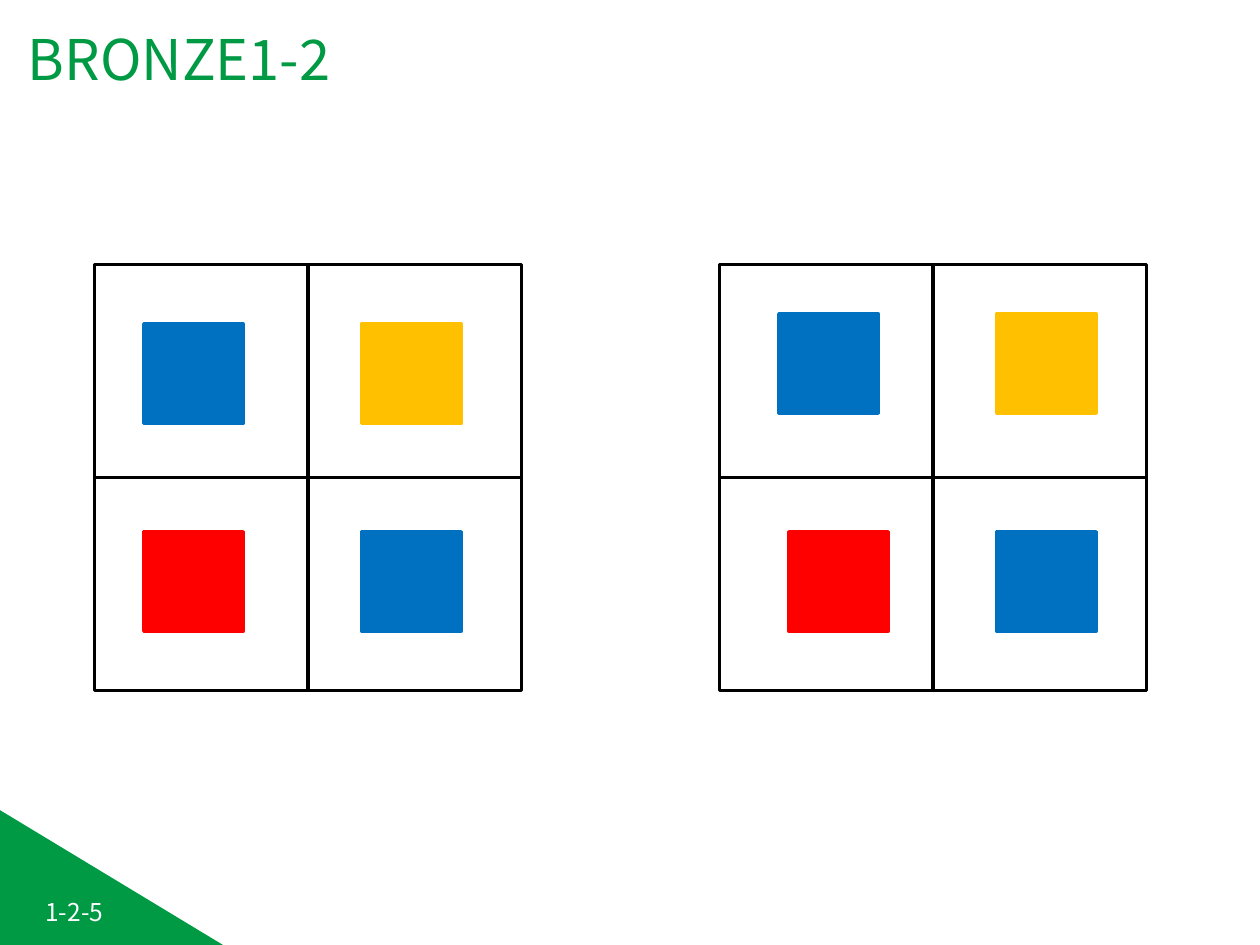
from pptx import Presentation
from pptx.dml.color import RGBColor
from pptx.enum.shapes import MSO_CONNECTOR, MSO_SHAPE
from pptx.enum.text import MSO_ANCHOR, PP_ALIGN
from pptx.oxml.ns import qn
from pptx.util import Inches, Pt
from lxml import etree

RECT, CORNER = MSO_SHAPE.RECTANGLE, MSO_SHAPE.RIGHT_TRIANGLE
LINE = MSO_CONNECTOR.STRAIGHT
MIDDLE = MSO_ANCHOR.MIDDLE
LEFT, CENTER = PP_ALIGN.LEFT, PP_ALIGN.CENTER

GREEN = RGBColor(0x00, 0x99, 0x44)
BLUE = RGBColor(0x00, 0x70, 0xC0)
GOLD = RGBColor(0xFF, 0xC0, 0x00)
RED = RGBColor(0xFF, 0x00, 0x00)
BLACK = RGBColor(0x00, 0x00, 0x00)
WHITE = RGBColor(0xFF, 0xFF, 0xFF)
FONT = "Noto Sans CJK SC"

# Content: each board has a left edge and tiles as (x, y, colour)
TITLE = "BRONZE1-2"
LABEL = "1-2-5"
BOARDS = [
    (0.75, [(1.14, 2.57, BLUE), (2.87, 2.57, GOLD),
            (1.14, 4.22, RED), (2.87, 4.22, BLUE)]),
    (5.71, [(6.18, 2.49, BLUE), (7.91, 2.49, GOLD),
            (6.26, 4.22, RED), (7.91, 4.22, BLUE)]),
]
TOP, CELL, TILE = 2.1, 1.69, 0.79
WIDE = 3.39


def write(frame, text, size, color, align=LEFT):
    frame.word_wrap = True
    frame.vertical_anchor = MIDDLE
    par = frame.paragraphs[0]
    par.alignment = align
    run = par.add_run()
    run.text = text
    font = run.font
    font.name, font.size, font.color.rgb = FONT, Pt(size), color


def add_box(parent, kind, x, y, w, h, fill=None, line=None):
    box = parent.add_shape(kind, Inches(x), Inches(y), Inches(w), Inches(h))
    box.shadow.inherit = False
    if fill is None:
        box.fill.background()
    else:
        box.fill.solid()
        box.fill.fore_color.rgb = fill
    if line is None:
        box.line.fill.background()
    else:
        box.line.color.rgb = line
        box.line.width = Pt(2)
    return box


def split(parent, box):
    """Divide a row into two cells, from top middle to bottom middle."""
    rule = parent.add_connector(LINE, 0, 0, 0, 0)
    rule.begin_connect(box, 0)
    rule.end_connect(box, 2)
    rule.line.color.rgb = BLACK
    rule.line.width = Pt(2.25)
    etree.SubElement(rule._element.spPr, qn("a:effectLst"))


def main():
    deck = Presentation()
    deck.slide_width, deck.slide_height = Inches(10), Inches(7.5)
    slide = deck.slides.add_slide(deck.slide_layouts[5])
    shapes = slide.shapes

    # Title
    title = shapes.title
    title.left, title.top = Inches(0.12), Inches(0.03)
    title.width, title.height = Inches(8.91), Inches(0.87)
    write(title.text_frame, TITLE, 32, GREEN)

    # Boards of two split rows
    for left, _ in BOARDS:
        group = shapes.add_group_shape()
        for row in range(2):
            box = add_box(group.shapes, RECT, left, TOP + row * CELL,
                          WIDE, CELL, line=BLACK)
            split(group.shapes, box)

    # Coloured tiles
    for _, tiles in BOARDS:
        for x, y, color in tiles:
            add_box(shapes, RECT, x, y, TILE, TILE, fill=color, line=color)

    # Corner label
    corner = add_box(shapes, CORNER, 0, 6.43, 1.77, 1.07, fill=GREEN)
    write(corner.text_frame, LABEL, 14, WHITE, align=CENTER)

    deck.save("out.pptx")


if __name__ == "__main__":
    main()
